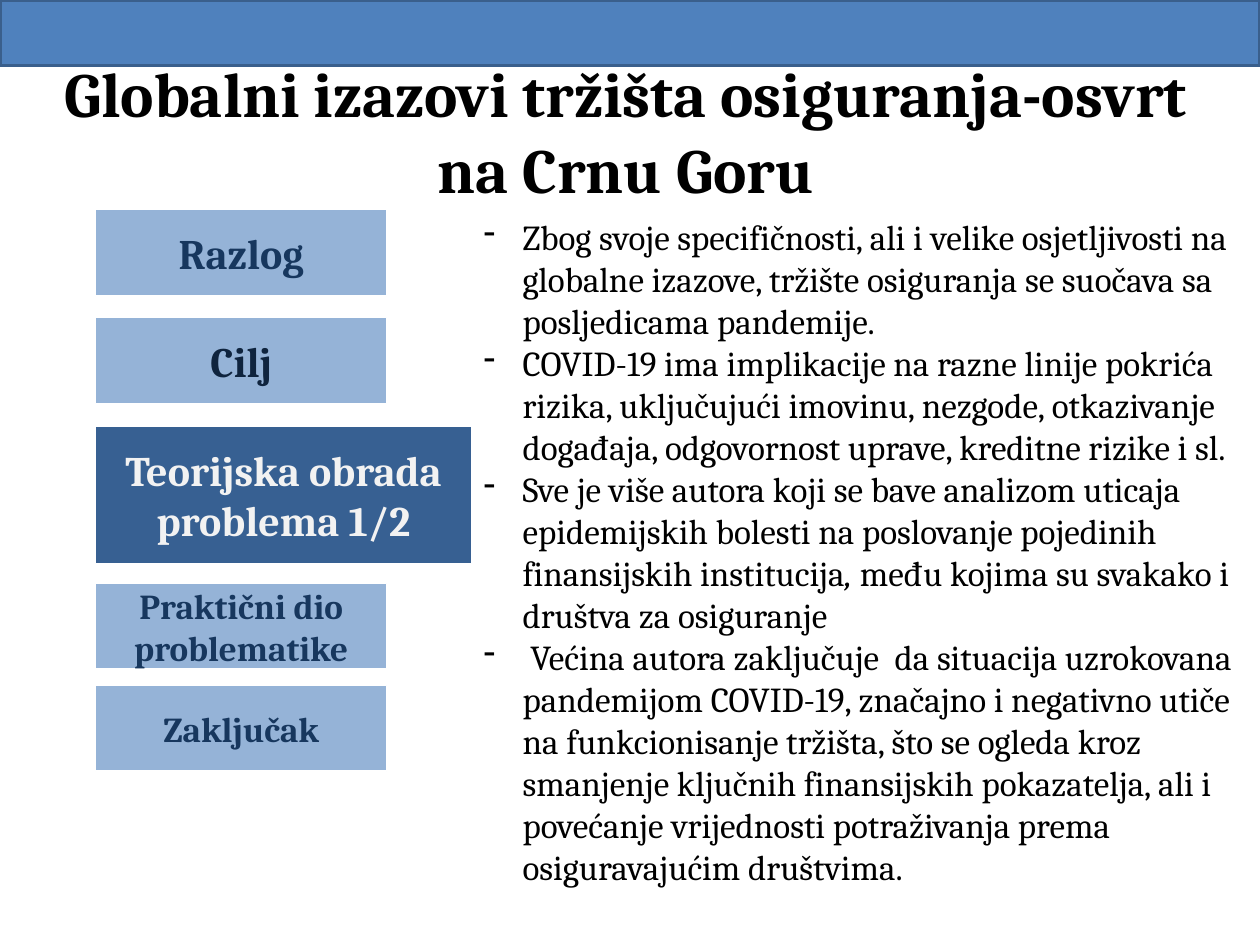
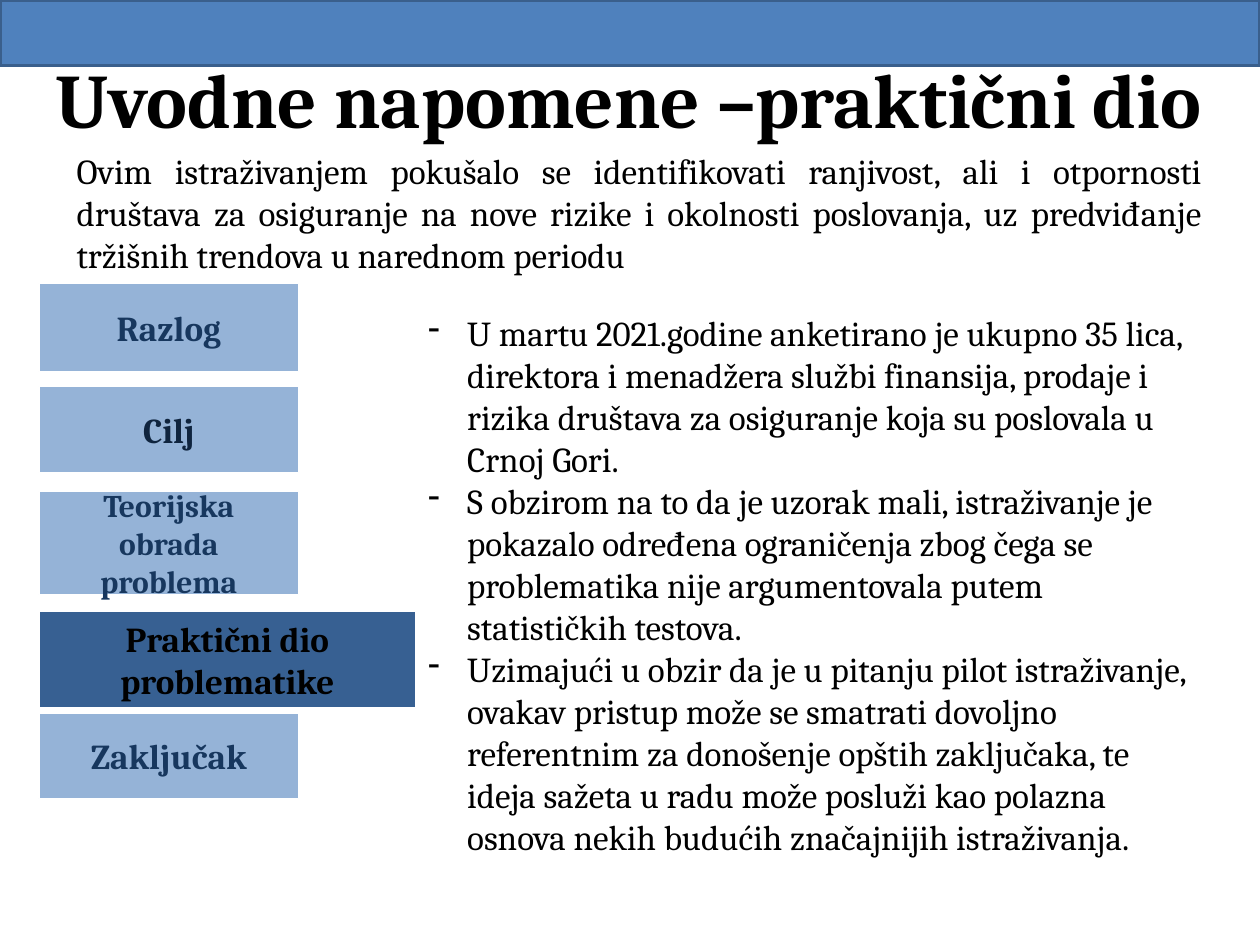
from pptx import Presentation, util as u
from pptx.dml.color import RGBColor
from pptx.enum import shapes, text
from pptx.oxml import parse_xml
from pptx.oxml.ns import nsdecls

FONT = "Cambria"
BLACK, NAVY, DARK = "000000", "17375E", "0F243E"
PALE, DEEP, BAND, EDGE = "95B3D7", "376092", "4F81BD", "3A5F8C"
CENTER, LEFT, JUST = text.PP_ALIGN.CENTER, text.PP_ALIGN.LEFT, text.PP_ALIGN.JUSTIFY
MIDDLE, TOP = text.MSO_ANCHOR.MIDDLE, text.MSO_ANCHOR.TOP

REASONS = [
    "Zbog svoje specifičnosti, ali i velike osjetljivosti na globalne izazove, "
    "tržište osiguranja se suočava sa posljedicama pandemije.",
    "COVID-19 ima implikacije na razne linije pokrića rizika, uključujući imovinu, "
    "nezgode, otkazivanje događaja, odgovornost uprave, kreditne rizike i sl.",
    ["Sve je više autora koji se bave analizom uticaja epidemijskih bolesti na "
     "poslovanje pojedinih finansijskih institucija", ", ",
     "među kojima su svakako i društva za osiguranje"],
    " Većina autora zaključuje  da situacija uzrokovana pandemijom COVID-19, "
    "značajno i negativno utiče na funkcionisanje tržišta, što se ogleda kroz "
    "smanjenje ključnih finansijskih pokazatelja, ali i povećanje vrijednosti "
    "potraživanja prema osiguravajućim društvima.",
]
SURVEY = [
    "U martu 2021.godine anketirano je ukupno 35 lica, direktora i menadžera službi "
    "finansija, prodaje i rizika društava za osiguranje koja su poslovala u Crnoj Gori.",
    "S obzirom na to da je uzorak mali, istraživanje je pokazalo određena ograničenja "
    "zbog čega se problematika nije argumentovala putem statističkih testova.",
    "Uzimajući u obzir da je u pitanju pilot istraživanje, ovakav pristup može se "
    "smatrati dovoljno referentnim za donošenje opštih zaključaka, te ideja sažeta u "
    "radu može posluži kao polazna osnova nekih budućih značajnijih istraživanja.",
]
INTRO = ("Ovim istraživanjem pokušalo se identifikovati ranjivost, ali i otpornosti "
         "društava za osiguranje na nove rizike i okolnosti poslovanja, uz predviđanje "
         "tržišnih trendova u narednom periodu")


def color(code):
    """Turn a hex string into a colour."""
    return RGBColor.from_string(code)


def place(box):
    """Turn left, top, width, height in inches into lengths."""
    return [u.Inches(n) for n in box]


def dash(para):
    """Give a paragraph a hanging dash bullet."""
    props = para._p.get_or_add_pPr()
    props.set("marL", str(u.Inches(0.31)))
    props.set("indent", str(-u.Inches(0.31)))
    props.append(parse_xml(f'<a:buFontTx {nsdecls("a")}/>'))
    props.append(parse_xml(f'<a:buChar {nsdecls("a")} char="-"/>'))


def write(frame, paras, size=20, ink=BLACK, bold=False, align=LEFT, anchor=TOP,
          bullet=False, fit=text.MSO_AUTO_SIZE.NONE):
    """Write paragraphs; every second run of a list is italic."""
    frame.word_wrap = True
    frame.auto_size = fit
    frame.vertical_anchor = anchor
    for i, item in enumerate(paras):
        para = frame.add_paragraph() if i else frame.paragraphs[0]
        if bullet:
            dash(para)
        para.alignment = align
        para.space_before = u.Pt(0)
        for k, words in enumerate([item] if isinstance(item, str) else item):
            run = para.add_run()
            run.text = words
            font = run.font
            font.name, font.size, font.bold = FONT, u.Pt(size), bold
            font.italic = k % 2 == 1
            font.color.rgb = color(ink)


def note(slide, box, paras, **form):
    """Add a text box that grows with its text."""
    frame = slide.shapes.add_textbox(*place(box)).text_frame
    write(frame, paras, fit=text.MSO_AUTO_SIZE.SHAPE_TO_FIT_TEXT, **form)


def block(slide, box, fill, edge="FFFFFF", width=0.75):
    """Add a filled rectangle."""
    shape = slide.shapes.add_shape(shapes.MSO_SHAPE.RECTANGLE, *place(box))
    shape.shadow.inherit = False
    shape.fill.solid()
    shape.fill.fore_color.rgb = color(fill)
    shape.line.color.rgb = color(edge)
    shape.line.width = u.Pt(width)
    return shape


def agenda(slide, left, width, wide, active, steps):
    """Stack the agenda steps, with the active one wide and deep."""
    for i, (words, top, height, size, ink) in enumerate(steps):
        on = i == active
        shape = block(slide, (left, top, wide if on else width, height),
                      DEEP if on else PALE)
        write(shape.text_frame, [words], size=size, ink=ink, bold=True,
              align=CENTER, anchor=MIDDLE)


def page(deck, title, box, size):
    """Add a slide with the top band and a bold title."""
    slide = deck.slides.add_slide(deck.slide_layouts[5])
    head = slide.shapes.title
    head.left, head.top, head.width, head.height = place(box)
    write(head.text_frame, [title], size=size, bold=True, align=CENTER, anchor=MIDDLE)
    block(slide, (0, 0, 10, 0.52), BAND, EDGE, 2)
    return slide


def main():
    """Build both slides and save the deck."""
    deck = Presentation()
    deck.slide_width, deck.slide_height = u.Inches(10), u.Inches(7.5)

    theory = page(deck, "Globalni izazovi tržišta osiguranja-osvrt na Crnu Goru",
                  (0.2, 0.52, 9.53, 1.03), 36)
    agenda(theory, 0.76, 2.31, 2.98, 2, [
        ("Razlog", 1.66, 0.69, 24, NAVY),
        ("Cilj", 2.52, 0.68, 24, DARK),
        ("Teorijska obrada problema 1/2", 3.38, 1.09, 24, "F2F2F2"),
        ("Praktični dio problematike", 4.63, 0.68, 20, NAVY),
        ("Zaključak", 5.44, 0.68, 20, NAVY),
    ])
    note(theory, (3.74, 1.66, 6.14, 6.13), REASONS, bullet=True)

    survey = page(deck, "Uvodne napomene –praktični dio", (-0.01, 0.26, 10, 1.03), 44)
    note(survey, (0.51, 1.14, 9.13, 1.11), [INTRO], align=JUST)
    agenda(survey, 0.31, 2.06, 2.99, 3, [
        ("Razlog", 2.25, 0.7, 20, NAVY),
        ("Cilj", 3.07, 0.68, 20, DARK),
        ("Teorijska obrada problema", 3.9, 0.82, 18, NAVY),
        ("Praktični dio problematike", 4.85, 0.77, 20, BLACK),
        ("Zaključak", 5.66, 0.68, 20, NAVY),
    ])
    note(survey, (3.3, 2.42, 6.27, 5.62), SURVEY, bullet=True)

    deck.save("out.pptx")


if __name__ == "__main__":
    main()
